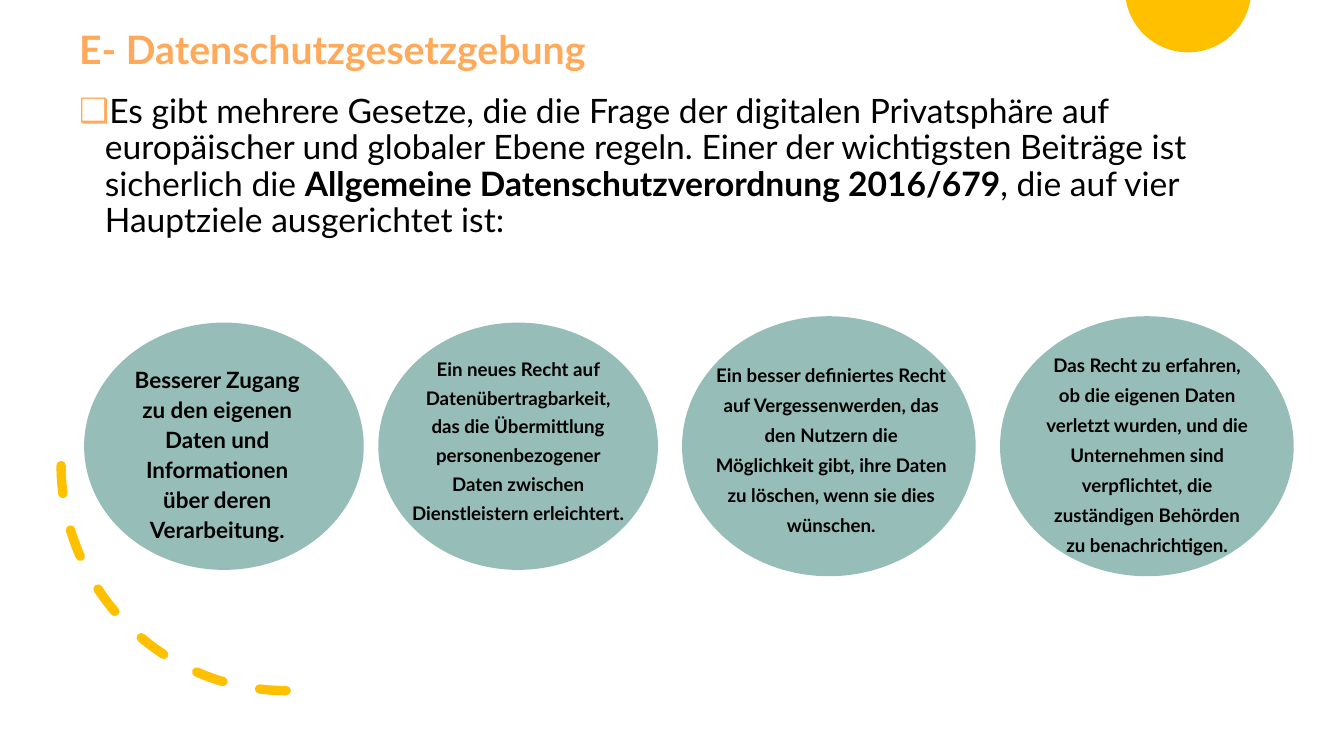
from math import cos, radians, sin

from lxml.etree import SubElement
from pptx import Presentation
from pptx.dml.color import RGBColor
from pptx.enum.dml import MSO_LINE
from pptx.enum.shapes import MSO_SHAPE
from pptx.enum.text import MSO_ANCHOR, MSO_AUTO_SIZE, PP_ALIGN
from pptx.oxml.ns import qn
from pptx.util import Cm, Pt

FONT = "Lato"
YELLOW, ORANGE, TEAL, BLACK = "FFC000", "FFAA5A", "96BDB8", "000000"
OVAL_MIDDLE = 16.87
INTRODUCTION = [
    ("Es gibt mehrere Gesetze, die die Frage der digitalen Privatsphäre auf europäischer "
     "und globaler Ebene regeln. Einer der wichtigsten Beiträge ist sicherlich die ", False),
    ("Allgemeine Datenschutzverordnung 2016/679", True),
    (", die auf vier Hauptziele ausgerichtet ist:", False),
]
SMALL_OVAL, LARGE_OVAL = (10.57, 9.35), (11.1, 9.83)
GOALS = [
    (3.18, SMALL_OVAL, (4.83, 13.72, 6.76, 6.78), 24, 32.2,
     "Besserer Zugang zu den eigenen Daten und Informationen über deren Verarbeitung."),
    (14.3, SMALL_OVAL, (15.57, 13.28, 8.03, 7.65), 20, 30.8,
     "Ein neues Recht auf Datenübertragbarkeit, das die Übermittlung personenbezogener "
     "Daten zwischen Dienstleistern erleichtert."),
    (25.78, LARGE_OVAL, (27.05, 13.46, 8.74, 6.76), 20, 32.2,
     "Ein besser definiertes Recht auf Vergessenwerden, das den Nutzern die Möglichkeit "
     "gibt, ihre Daten zu löschen, wenn sie dies wünschen."),
    (37.8, LARGE_OVAL, (39.5, 13.08, 7.72, 7.9), 20, 32.2,
     "Das Recht zu erfahren, ob die eigenen Daten verletzt wurden, und die Unternehmen "
     "sind verpflichtet, die zuständigen Behörden zu benachrichtigen."),
]


def color(hex_string):
    """Return the colour for a hex string."""
    return RGBColor.from_string(hex_string)


def format_run(run, size, hex_string, bold):
    """Set font, size, colour and weight of a run."""
    run.font.name = FONT
    run.font.size = Pt(size)
    run.font.color.rgb = color(hex_string)
    run.font.bold = bold


def fill_plain(shape, hex_string):
    """Give a shape a flat fill without line or shadow."""
    shape.shadow.inherit = False
    shape.fill.solid()
    shape.fill.fore_color.rgb = color(hex_string)
    shape.line.fill.background()


def place_placeholder(shape, top, height):
    """Move a placeholder and return its first paragraph."""
    shape.left, shape.top = Cm(2.74), Cm(top)
    shape.width, shape.height = Cm(43.82), Cm(height)
    frame = shape.text_frame
    frame.word_wrap = True
    frame.auto_size = MSO_AUTO_SIZE.NONE
    frame.vertical_anchor = MSO_ANCHOR.TOP
    paragraph = frame.paragraphs[0]
    paragraph.alignment = PP_ALIGN.LEFT
    paragraph.line_spacing = 0.9
    paragraph.space_before = Pt(0)
    return paragraph


def set_bullet(paragraph, character, hex_string, indent):
    """Give a paragraph a coloured bullet and a hanging indent."""
    properties = paragraph._p.get_or_add_pPr()
    properties.set("marL", str(Cm(indent)))
    properties.set("indent", str(-Cm(indent)))
    bullet_color = SubElement(properties, qn("a:buClr"))
    SubElement(bullet_color, qn("a:srgbClr"), val=hex_string)
    SubElement(properties, qn("a:buChar"), char=character)


def add_title(slide):
    """Write the slide title."""
    paragraph = place_placeholder(slide.shapes.title, 1.02, 2.44)
    paragraph.text = "E- Datenschutzgesetzgebung"
    format_run(paragraph.runs[0], 42, ORANGE, True)


def add_introduction(slide):
    """Write the bulleted introduction."""
    paragraph = place_placeholder(slide.placeholders[1], 3.45, 7.47)
    set_bullet(paragraph, "❑", ORANGE, 0.97)
    for text, bold in INTRODUCTION:
        run = paragraph.add_run()
        run.text = text
        format_run(run, 36, BLACK, bold)


def add_sun(slide):
    """Draw the part of a circle that hangs from the top edge."""
    points = [(Cm(44.91 + 2.39 * cos(radians(angle))), Cm(2.39 * sin(radians(angle)) - 0.41))
              for angle in range(10, 171, 4)]
    builder = slide.shapes.build_freeform(*points[0])
    builder.add_line_segments(points[1:], close=True)
    fill_plain(builder.convert_to_shape(), YELLOW)


def add_dashed_arc(slide):
    """Draw the dashed quarter circle at the lower left."""
    arc = slide.shapes.add_shape(MSO_SHAPE.ARC, Cm(2.31), Cm(9.09), Cm(17.02), Cm(17.02))
    arc.rotation = 90
    arc._element.spPr.xfrm.set("flipV", "1")
    arc.shadow.inherit = False
    arc.fill.background()
    arc.line.color.rgb = color(YELLOW)
    arc.line.width = Pt(10)
    arc.line.dash_style = MSO_LINE.DASH
    arc.line._get_or_add_ln().set("cap", "rnd")


def add_goal(slide, left, oval_size, text_box, size, spacing, text):
    """Draw an oval and the goal written over it."""
    width, height = oval_size
    oval = slide.shapes.add_shape(
        MSO_SHAPE.OVAL, Cm(left), Cm(OVAL_MIDDLE - height / 2), Cm(width), Cm(height))
    fill_plain(oval, TEAL)
    frame = slide.shapes.add_textbox(*map(Cm, text_box)).text_frame
    frame.word_wrap = True
    frame.auto_size = MSO_AUTO_SIZE.SHAPE_TO_FIT_TEXT
    frame.margin_left = frame.margin_right = frame.margin_top = frame.margin_bottom = 0
    paragraph = frame.paragraphs[0]
    paragraph.text = text
    paragraph.alignment = PP_ALIGN.CENTER
    paragraph.line_spacing = Pt(spacing)
    format_run(paragraph.runs[0], size, BLACK, True)


def main():
    """Build and save the slide."""
    presentation = Presentation()
    presentation.slide_width, presentation.slide_height = Cm(50.8), Cm(28.58)
    slide = presentation.slides.add_slide(presentation.slide_layouts[1])
    add_sun(slide)
    add_dashed_arc(slide)
    add_title(slide)
    add_introduction(slide)
    for goal in GOALS:
        add_goal(slide, *goal)
    presentation.save("out.pptx")


if __name__ == "__main__":
    main()
